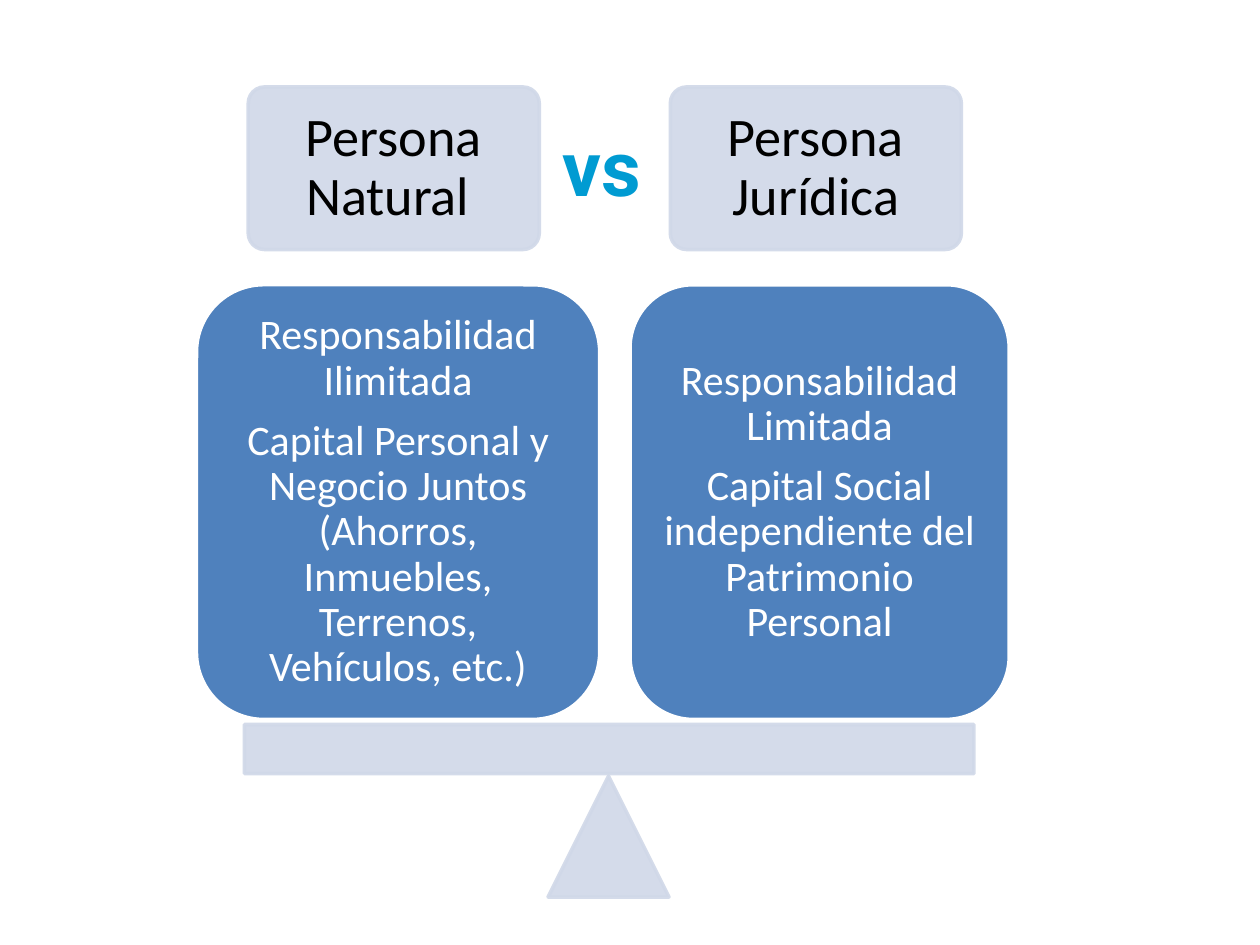
from dataclasses import dataclass

from lxml.etree import SubElement
from pptx import Presentation
from pptx.dml.color import RGBColor
from pptx.enum.shapes import MSO_SHAPE as SHAPE
from pptx.enum.text import MSO_ANCHOR as ANCHOR, PP_ALIGN as ALIGN
from pptx.oxml.ns import qn
from pptx.util import Inches, Pt

PALE = RGBColor(0xD0, 0xD8, 0xE8)
BLUE = RGBColor(0x4F, 0x81, 0xBD)
CYAN = RGBColor(0x00, 0x9B, 0xD2)
WHITE = RGBColor(0xFF, 0xFF, 0xFF)
BLACK = RGBColor(0x00, 0x00, 0x00)

HEADER_TOP, HEADER_W, HEADER_H = 0.69, 2.31, 1.29
PANEL_TOP, PANEL_H = 2.26, 3.45


@dataclass
class Side:
    header: str
    header_left: float
    points: list[str]
    panel_left: float
    panel_width: float


SIDES = [
    Side("Persona Natural ", 1.97,
         ["Responsabilidad Ilimitada",
          "Capital Personal y Negocio Juntos\v"
          "(Ahorros, Inmuebles, Terrenos, Vehículos, etc.)"],
         1.56, 3.2),
    Side("Persona Jurídica", 5.32,
         ["Responsabilidad Limitada",
          "Capital Social independiente del Patrimonio Personal"],
         5, 3.01),
]


def add_block(s, kind: SHAPE, left: float, top: float, width: float, height: float,
              *, fill: RGBColor, line: RGBColor, opacity: int = 100):
    """Add a filled, outlined preset shape; opacity is a percentage."""
    sp = s.shapes.add_shape(kind, Inches(left), Inches(top), Inches(width), Inches(height))
    sp.shadow.inherit = False
    sp.fill.solid()
    sp.fill.fore_color.rgb = fill
    sp.line.color.rgb = line
    sp.line.width = Pt(2)
    if opacity < 100:
        for color in sp._element.spPr.iter(qn("a:srgbClr")):
            SubElement(color, qn("a:alpha"), val=str(opacity * 1000))
    return sp


def add_pale_block(s, kind: SHAPE, left: float, top: float, width: float, height: float):
    return add_block(s, kind, left, top, width, height, fill=PALE, line=PALE, opacity=90)


def write(sp, paragraphs: list[str], *, size: float, color: RGBColor, font: str = "Calibri",
          bold: bool = False, inset: float = 0.1, spacing: float = 0.9) -> None:
    tf = sp.text_frame
    tf.word_wrap = True
    tf.vertical_anchor = ANCHOR.MIDDLE
    tf.margin_left = tf.margin_right = tf.margin_top = tf.margin_bottom = Inches(inset)
    for i, text in enumerate(paragraphs):
        p = tf.paragraphs[0] if i == 0 else tf.add_paragraph()
        p.text = text
        p.alignment = ALIGN.CENTER
        p.line_spacing = spacing
        if i < len(paragraphs) - 1:
            p.space_after = Pt(round(size * 0.35, 1))
        for r in p.runs:
            r.font.name = font
            r.font.size = Pt(size)
            r.font.bold = bold
            r.font.color.rgb = color


def add_side(s, side: Side) -> None:
    header = add_pale_block(s, SHAPE.ROUNDED_RECTANGLE, side.header_left, HEADER_TOP,
                            HEADER_W, HEADER_H)
    header.adjustments[0] = 0.1
    write(header, [side.header], size=31, color=BLACK, inset=0.13)

    panel = add_block(s, SHAPE.ROUNDED_RECTANGLE, side.panel_left, PANEL_TOP,
                      side.panel_width, PANEL_H, fill=BLUE, line=WHITE)
    write(panel, side.points, size=24, color=WHITE)


def main() -> None:
    prs = Presentation()
    prs.slide_width, prs.slide_height = Inches(10), Inches(7.5)
    s = prs.slides.add_slide(prs.slide_layouts[6])

    add_pale_block(s, SHAPE.ISOSCELES_TRIANGLE, 4.35, 6.16, 0.96, 0.96)
    add_pale_block(s, SHAPE.RECTANGLE, 1.94, 5.75, 5.79, 0.39)
    for side in SIDES:
        add_side(s, side)

    versus = s.shapes.add_textbox(Inches(0.28), Inches(0.69), Inches(9), Inches(1.25))
    write(versus, ["vs"], size=44, color=CYAN, font="Roboto", bold=True, spacing=1.0)

    prs.save("out.pptx")


if __name__ == "__main__":
    main()
